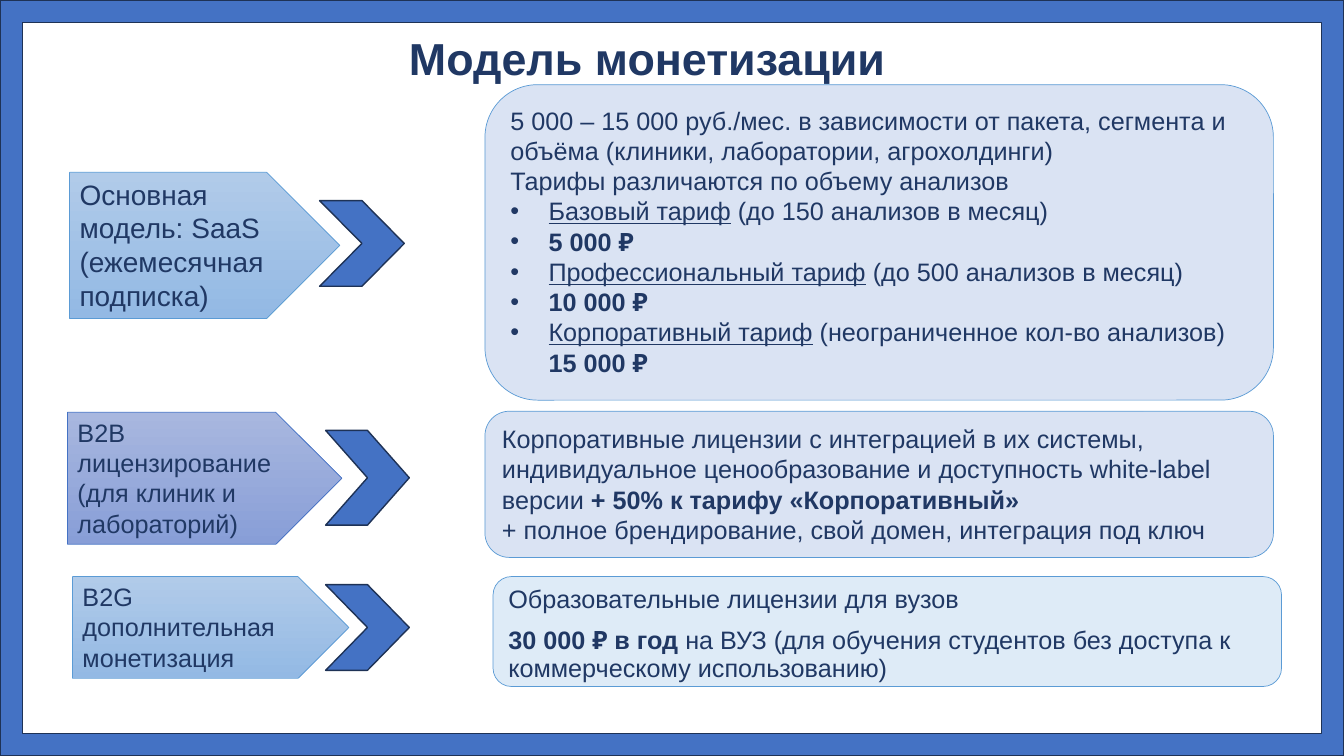
from lxml.etree import SubElement
from pptx import Presentation
from pptx.dml.color import RGBColor
from pptx.enum.shapes import MSO_SHAPE as Shape
from pptx.enum.text import MSO_ANCHOR as Anchor, PP_ALIGN as Align
from pptx.oxml.ns import qn
from pptx.util import Inches, Pt

NAVY = RGBColor(0x20, 0x38, 0x64)
BLUE = RGBColor(0x44, 0x72, 0xC4)
DARK = RGBColor(0x1E, 0x32, 0x56)
EDGE = RGBColor(0x5B, 0x9B, 0xD5)
PALE = RGBColor(0xDA, 0xE3, 0xF3)
ICE = RGBColor(0xDE, 0xEB, 0xF7)
SKY = [RGBColor(0xB1, 0xCB, 0xE9), RGBColor(0x93, 0xB9, 0xE4)]
LILAC = [RGBColor(0xA8, 0xB7, 0xDF), RGBColor(0x88, 0x9E, 0xD7)]

PLATES = [
    ((0.69, 1.71, 2.68, 1.45), SKY, EDGE, 20,
     "Основная модель: SaaS (ежемесячная подписка)"),
    ((0.67, 4.09, 2.72, 1.31), LILAC, BLUE, 18,
     "B2B лицензирование (для клиник и лабораторий)"),
    ((0.72, 5.72, 2.74, 1.01), SKY, EDGE, 18,
     "B2G дополнительная монетизация"),
]
ARROWS = [(3.17, 1.99, 0.84, 0.85), (3.23, 4.27, 0.83, 0.94),
          (3.23, 5.8, 0.83, 0.85)]
INTRO = [
    [("5 000 – 15 000 руб./мес. в зависимости от пакета, сегмента и "
      "объёма (клиники, лаборатории, агрохолдинги)", "")],
    [("Тарифы различаются по объему анализов", "")],
]
RATES = [
    [("Базовый тариф", "u"), (" (до 150 анализов в месяц)", "")],
    [("5 000 ", "b"), ("₽", "bc")],
    [("Профессиональный тариф", "u"), (" (до 500 анализов в месяц)", "")],
    [("10 000 ", "b"), ("₽", "bc")],
    [("Корпоративный тариф", "u"), (" (неограниченное кол-во анализов) ", ""),
     ("15 000 ", "b"), ("₽", "bc")],
]
LICENSE = [
    [("Корпоративные лицензии с интеграцией в их системы, индивидуальное "
      "ценообразование и доступность white-label версии ", ""),
     ("+ 50% к тарифу «Корпоративный»", "b")],
    [("+ полное брендирование, свой домен, интеграция под ключ", "")],
]
STUDY = [
    [("Образовательные лицензии для вузов", "")],
    [("30 000 ₽ в год ", "b"),
     ("на ВУЗ (для обучения студентов без доступа к "
      "коммерческому использованию)", "")],
]


def add_form(slide, kind, box, fill, edge, width):
    """Add a preset shape with a solid or two-colour fill."""
    form = slide.shapes.add_shape(kind, *map(Inches, box))
    form.shadow.inherit = False
    if isinstance(fill, list):
        form.fill.gradient()
        form.fill.gradient_angle = 270
        for stop, color in zip(form.fill.gradient_stops, fill):
            stop.color.rgb = color
    else:
        form.fill.solid()
        form.fill.fore_color.rgb = fill
    form.line.color.rgb = edge
    form.line.width = Pt(width)
    return form


def add_bullet(para):
    """Give a paragraph a hanging round bullet."""
    props = para._p.get_or_add_pPr()
    props.set("marL", str(Inches(0.38)))
    props.set("indent", str(-Inches(0.38)))
    SubElement(props, qn("a:buFont")).set("typeface", "Arial")
    SubElement(props, qn("a:buChar")).set("char", "•")


def write(form, paras, size=18, bullets=0, align=Align.LEFT, anchor=Anchor.TOP):
    """Write styled paragraphs, with bullets on the last ones."""
    frame = form.text_frame
    frame.word_wrap = True
    frame.vertical_anchor = anchor
    for index, runs in enumerate(paras):
        para = frame.add_paragraph() if index else frame.paragraphs[0]
        para.alignment = align
        if index >= len(paras) - bullets:
            add_bullet(para)
        para.font.size = Pt(size)
        para.font.name = "Arial"
        para.font.color.rgb = NAVY
        for text, style in runs:
            run = para.add_run()
            run.text = text
            if "b" in style:
                run.font.bold = True
            if "u" in style:
                run.font.underline = True
            if "c" in style:
                run.font.name = "Calibri"


def add_card(slide, box, fill, paras, bullets=0):
    """Add a rounded card with text."""
    card = add_form(slide, Shape.ROUNDED_RECTANGLE, box, fill, EDGE, 0.5)
    write(card, paras, bullets=bullets)
    return card


def add_title(slide, text):
    """Add the centred slide title."""
    box = slide.shapes.add_textbox(*map(Inches, (0.67, -0.12, 11.5, 1.45)))
    write(box, [[(text, "b")]], 32, align=Align.CENTER, anchor=Anchor.MIDDLE)
    box.text_frame.paragraphs[0].line_spacing = 0.9


def main():
    """Build and save the slide."""
    deck = Presentation()
    deck.slide_width, deck.slide_height = Inches(13.33), Inches(7.5)
    slide = deck.slides.add_slide(deck.slide_layouts[6])
    frame = add_form(slide, Shape.FRAME, (0, 0, 13.33, 7.5), BLUE, DARK, 1)
    frame.adjustments[0] = 0.03
    add_title(slide, "Модель монетизации")
    for box, fill, edge, size, text in PLATES:
        plate = add_form(slide, Shape.PENTAGON, box, fill, edge, 0.5)
        write(plate, [[(text, "")]], size)
    for box in ARROWS:
        add_form(slide, Shape.CHEVRON, box, BLUE, DARK, 1)
    add_card(slide, (4.81, 0.84, 7.82, 3.13), PALE, INTRO + RATES, len(RATES))
    add_card(slide, (4.81, 4.08, 7.82, 1.45), PALE, LICENSE)
    study = add_card(slide, (4.89, 5.72, 7.82, 1.09), ICE, STUDY)
    for para in study.text_frame.paragraphs:
        para.line_spacing = 0.9
    study.text_frame.paragraphs[1].space_before = Pt(10)
    deck.save("out.pptx")


if __name__ == "__main__":
    main()
